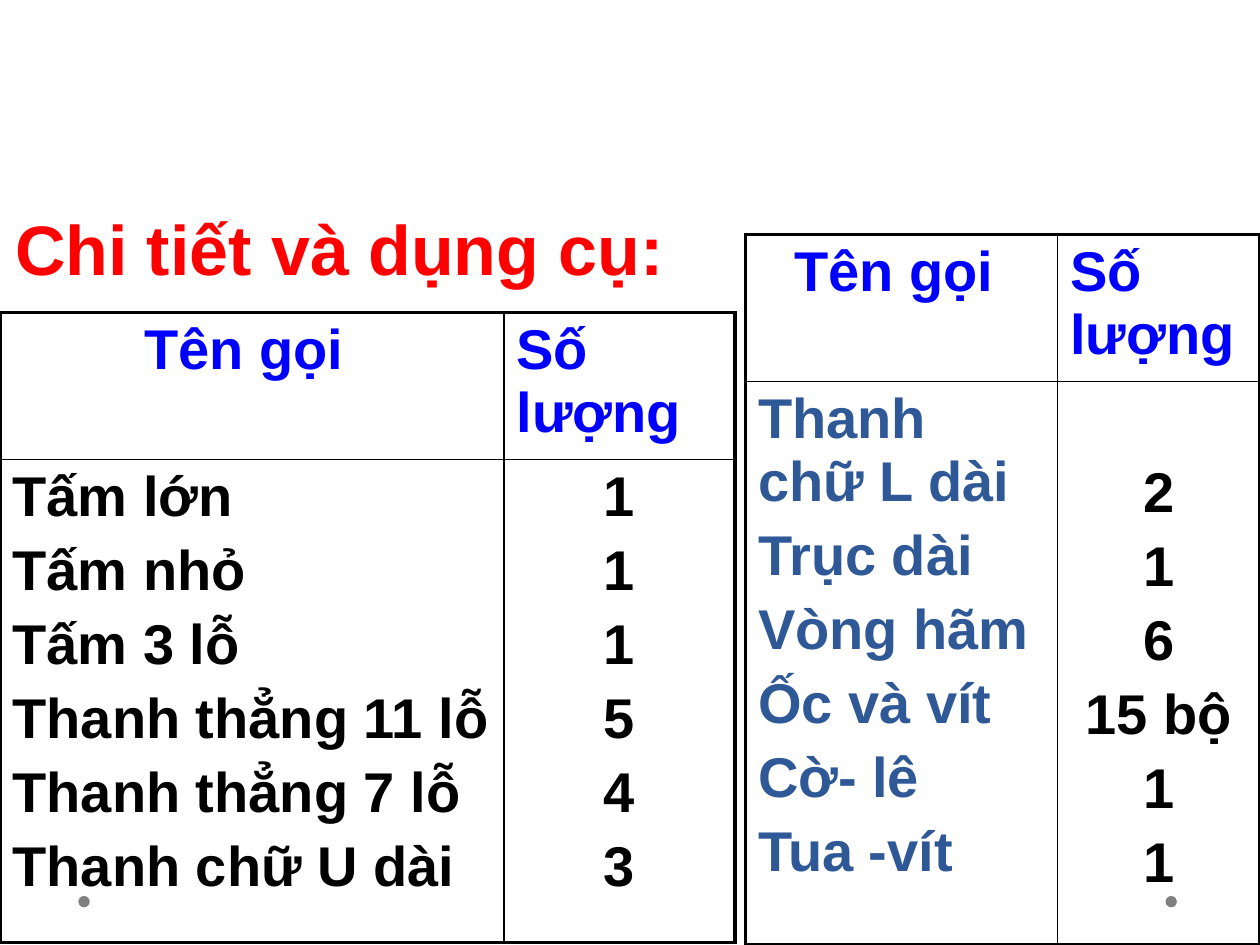
from pptx import Presentation
from pptx.util import Pt
from pptx.dml.color import RGBColor
from pptx.enum.shapes import MSO_SHAPE as Shape
from pptx.enum.text import PP_ALIGN as Align, MSO_ANCHOR as Anchor, MSO_AUTO_SIZE as Fit
from lxml.etree import SubElement, QName

# Content
TITLE = "Chi tiết và dụng cụ:"
HEADS = ("Tên gọi ", "Số lượng")
FONT = "Arial"
RED, BLUE, NAVY, BLACK, GREY = "FF0000", "0000FF", "2F5897", "000000", "808080"
SIZE, GAP = 32, 6.4
LINE = 36 + GAP  # pitch of one line with its space before

# at: left, top; drop: lines by which the counts start lower
TABLES = [
    dict(at=(0, 178.6), cols=(288, 132), rows=(84, 276), color=BLACK, drop=0,
         names=["Tấm lớn", "Tấm nhỏ", "Tấm 3 lỗ", "Thanh thẳng 11 lỗ",
                "Thanh thẳng 7 lỗ", "Thanh chữ U dài"],
         counts=["1", "1", "1", "5", "4", "3"]),
    dict(at=(426, 134), cols=(178.4, 115.6), rows=(84, 322), color=NAVY, drop=1,
         names=["Thanh chữ L dài", "Trục dài", "Vòng hãm", "Ốc và vít",
                "Cờ- lê", "Tua -vít"],
         counts=["2", "1", "6", "15 bộ", "1", "1"]),
]


def rgb(code):
    return RGBColor.from_string(code)


def write(frame, lines, size, color, align=Align.LEFT):
    frame.word_wrap = True
    for i, line in enumerate(lines):
        para = frame.paragraphs[0] if i == 0 else frame.add_paragraph()
        para.alignment = align
        para.space_before = Pt(GAP if i else 0)
        run = para.add_run()
        run.text = line
        font = run.font
        font.name, font.size, font.bold = FONT, Pt(size), True
        font.color.rgb = rgb(color)


def border(cell, widths):
    props = cell._tc.get_or_add_tcPr()
    space = QName(props).namespace
    for i, (side, width) in enumerate(widths.items()):
        edge = SubElement(props, f"{{{space}}}ln{side}", w=str(Pt(width)))
        fill = SubElement(edge, f"{{{space}}}solidFill")
        SubElement(fill, f"{{{space}}}srgbClr", val=BLACK)
        props.insert(i, edge)


def add_grid(slide, data):
    cols, rows = data["cols"], data["rows"]
    box = (*data["at"], sum(cols), sum(rows))
    grid = slide.shapes.add_table(2, 2, *map(Pt, box)).table
    grid.first_row = grid.horz_banding = False
    for i in range(2):
        grid.columns[i].width = Pt(cols[i])
        grid.rows[i].height = Pt(rows[i])

    texts = [
        [([HEADS[0]], BLUE, Align.CENTER), ([HEADS[1]], BLUE, Align.LEFT)],
        [(data["names"], data["color"], Align.LEFT),
         (data["counts"], BLACK, Align.CENTER)],
    ]
    for r, row in enumerate(texts):
        for c, (lines, color, align) in enumerate(row):
            cell = grid.cell(r, c)
            cell.fill.background()
            write(cell.text_frame, lines, SIZE, color, align)
            # Thick outside, thin inside
            thick = {"L": c == 0, "R": c == 1, "T": r == 0, "B": r == 1}
            border(cell, {side: 2.25 if on else 1 for side, on in thick.items()})
    grid.cell(1, 1).margin_top = Pt(3.6 + data["drop"] * LINE)


deck = Presentation()
deck.slide_width, deck.slide_height = Pt(720), Pt(540)
slide = deck.slides.add_slide(deck.slide_layouts[5])

# Title
title = slide.shapes.title
title.left, title.top, title.width, title.height = map(Pt, (1.4, 113.8, 455.8, 55.4))
title.text_frame.auto_size = Fit.NONE
title.text_frame.vertical_anchor = Anchor.TOP
write(title.text_frame, [TITLE], 40, RED)

# Corner dots
for left in (44.8, 666):
    dot = slide.shapes.add_shape(Shape.OVAL, Pt(left), Pt(512), Pt(6.5), Pt(6.5))
    dot.shadow.inherit = False
    dot.fill.solid()
    dot.fill.fore_color.rgb = rgb(GREY)
    dot.line.fill.background()

# Tables
for data in TABLES:
    add_grid(slide, data)

deck.save("out.pptx")
